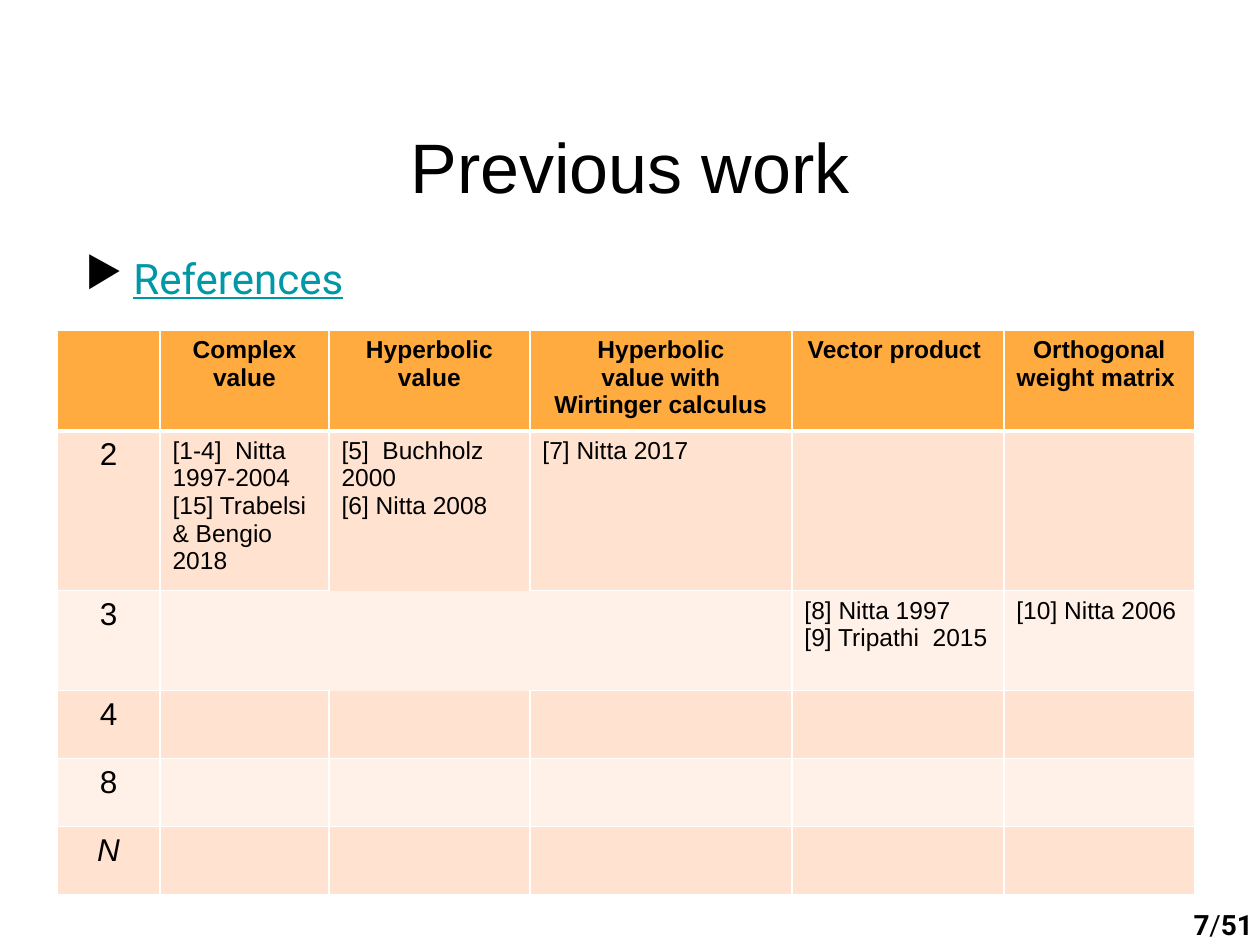
from lxml.etree import SubElement
from pptx import Presentation
from pptx.dml.color import RGBColor
from pptx.enum.text import MSO_ANCHOR, PP_ALIGN
from pptx.oxml.ns import qn
from pptx.util import Pt

SCALE = 914400 / 126
COLORS = {
    "text": "000000",
    "link": "0097A7",
    "header": "FFAB40",
    "odd": "FFE2CF",
    "even": "FFF1E8",
    "border": "FFFFFF",
}
FORMATS = {
    "title": {"name": "Arial", "size": Pt(40)},
    "link": {"name": "Roboto", "size": Pt(24), "underline": True},
    "page": {"name": "Roboto", "size": Pt(16), "bold": True},
    "total": {"name": "Roboto", "size": Pt(16), "bold": False},
    "header": {"name": "Arial", "size": Pt(14), "bold": True},
    "dimension": {"name": "Arial", "size": Pt(18), "bold": False},
    "variable": {"name": "Arial", "size": Pt(18), "bold": False, "italic": True},
    "citation": {"name": "Arial", "size": Pt(14), "bold": False},
}
COLUMN_WIDTHS = [103, 169, 201, 262, 212, 191]
ROW_HEIGHTS = [100, 100, 100, 68, 68, 68]
HEADERS = [
    "",
    "Complex value",
    "Hyperbolic\nvalue",
    "Hyperbolic\nvalue with\nWirtinger calculus",
    "Vector product ",
    "Orthogonal weight matrix ",
]
DIMENSIONS = ["2", "3", "4", "8", "N"]
CITATIONS = {
    (1, 1): "[1-4]  Nitta 1997-2004\n[15] Trabelsi & Bengio 2018",
    (1, 2): "[5]  Buchholz 2000\n[6] Nitta 2008",
    (1, 3): "[7] Nitta 2017",
    (2, 4): "[8] Nitta 1997\n[9] Tripathi  2015",
    (2, 5): "[10] Nitta 2006",
}
SIDES = {"L": (0, -1), "R": (0, 1), "T": (-1, 0), "B": (1, 0)}
OPEN_CELL = (2, 2)


def px(length):
    """Turn pixels into EMU."""
    return round(length * SCALE)


def add_run(paragraph, text, style, color="text"):
    """Add a run in a named format."""
    run = paragraph.add_run()
    run.text = text
    for name, value in FORMATS[style].items():
        setattr(run.font, name, value)
    run.font.color.rgb = RGBColor.from_string(COLORS[color])


def add_text_frame(slide, box):
    """Add a wrapping text box and return its frame."""
    text_frame = slide.shapes.add_textbox(*map(px, box)).text_frame
    text_frame.word_wrap = True
    return text_frame


def add_title(slide, box):
    """Place the centred title."""
    paragraph = add_text_frame(slide, box).paragraphs[0]
    paragraph.alignment = PP_ALIGN.CENTER
    add_run(paragraph, "Previous work", "title")


def add_bullet(slide, box):
    """Place the bulleted reference line."""
    paragraph = add_text_frame(slide, box).paragraphs[0]
    properties = paragraph._p.get_or_add_pPr()
    properties.set("marL", str(px(48)))
    properties.set("indent", str(px(-48)))
    bullet_color = SubElement(properties, qn("a:buClr"))
    SubElement(bullet_color, qn("a:srgbClr"), val=COLORS["text"])
    SubElement(properties, qn("a:buChar"), char="▶")
    add_run(paragraph, "References", "link", "link")


def add_page_number(slide, box):
    """Place the page number and, beside it, the page count."""
    left, top, width, height = box
    total = add_text_frame(slide, (left + 48, top + 13, width + 6, height - 25)).paragraphs[0]
    add_run(total, "/", "total")
    add_run(total, "51", "page")
    number_frame = add_text_frame(slide, box)
    number_frame.vertical_anchor = MSO_ANCHOR.MIDDLE
    number = number_frame.paragraphs[0]
    number.alignment = PP_ALIGN.RIGHT
    add_run(number, "7", "page")


def set_borders(cell, row, column):
    """Draw white cell borders, leaving the open cell without any."""
    properties = cell._tc.get_or_add_tcPr()
    for side, (down, across) in SIDES.items():
        neighbour = (row + down, column + across)
        heavy = (row, side) in [(0, "B"), (1, "T")]
        line = SubElement(properties, qn(f"a:ln{side}"), w=str(Pt(3 if heavy else 1)))
        if OPEN_CELL in ((row, column), neighbour):
            SubElement(line, qn("a:noFill"))
        else:
            fill = SubElement(line, qn("a:solidFill"))
            SubElement(fill, qn("a:srgbClr"), val=COLORS["border"])


def cell_content(row, column):
    """Return the text, format and alignment of a table cell."""
    if row == 0:
        return HEADERS[column], "header", PP_ALIGN.CENTER
    if column == 0:
        text = DIMENSIONS[row - 1]
        return text, "dimension" if text.isdigit() else "variable", PP_ALIGN.CENTER
    return CITATIONS.get((row, column), ""), "citation", PP_ALIGN.LEFT


def fill_cell(cell, row, column):
    """Format one cell and write its text."""
    set_borders(cell, row, column)
    cell.fill.solid()
    band = "header" if row == 0 else "odd" if row % 2 else "even"
    cell.fill.fore_color.rgb = RGBColor.from_string(COLORS[band])
    text, style, alignment = cell_content(row, column)
    for index, line in enumerate(text.split("\n") if text else []):
        text_frame = cell.text_frame
        paragraph = text_frame.add_paragraph() if index else text_frame.paragraphs[0]
        paragraph.alignment = alignment
        add_run(paragraph, line, style)


def add_reference_table(slide, left, top):
    """Place the table of references by dimension and method."""
    box = (left, top, sum(COLUMN_WIDTHS), sum(ROW_HEIGHTS))
    frame = slide.shapes.add_table(len(ROW_HEIGHTS), len(COLUMN_WIDTHS), *map(px, box))
    table = frame.table
    for column, width in zip(table.columns, COLUMN_WIDTHS):
        column.width = px(width)
    for row, height in zip(table.rows, ROW_HEIGHTS):
        row.height = px(height)
    for row in range(len(ROW_HEIGHTS)):
        for column in range(len(COLUMN_WIDTHS)):
            fill_cell(table.cell(row, column), row, column)


def main():
    """Build and save the slide."""
    presentation = Presentation()
    presentation.slide_width = px(1260)
    presentation.slide_height = px(945)
    slide = presentation.slides.add_slide(presentation.slide_layouts[6])
    add_title(slide, (0, 117, 1260, 97))
    add_bullet(slide, (73, 246, 1102, 592))
    add_reference_table(slide, 57, 330)
    add_page_number(slide, (1149, 888, 73, 72))
    presentation.save("out.pptx")


if __name__ == "__main__":
    main()
